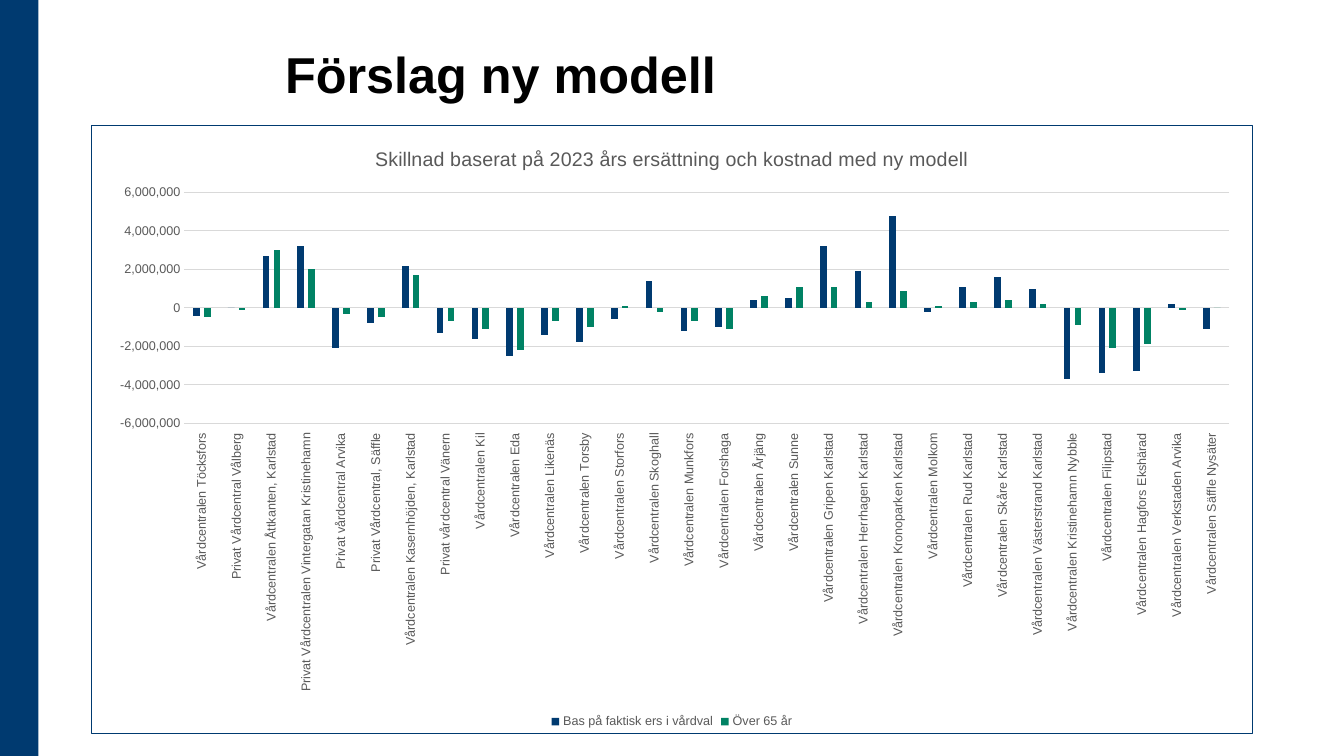
import pptx
import pptx.chart.data
import pptx.dml.color
import pptx.enum.chart
import pptx.enum.shapes
import pptx.enum.text
import pptx.oxml
import pptx.oxml.ns
import pptx.util

Pt = pptx.util.Pt
COLORS = {
    "navy": "003A70",
    "green": "008264",
    "gray": "595959",
    "grid": "D9D9D9",
    "black": "000000",
    "white": "FFFFFF",
}
UNIT = 100_000

# Health centre, difference on current compensation, difference over 65 (in UNIT)
CENTRES = [
    ("Vårdcentralen Töcksfors", -4, -5),
    ("Privat Vårdcentral Vålberg", 0, -1),
    ("Vårdcentralen Åttkanten, Karlstad", 27, 30),
    ("Privat Vårdcentralen Vintergatan Kristinehamn", 32, 20),
    ("Privat vårdcentral Arvika", -21, -3),
    ("Privat Vårdcentral, Säffle", -8, -5),
    ("Vårdcentralen Kasernhöjden, Karlstad", 22, 17),
    ("Privat vårdcentral Vänern", -13, -7),
    ("Vårdcentralen Kil", -16, -11),
    ("Vårdcentralen Eda", -25, -22),
    ("Vårdcentralen Likenäs", -14, -7),
    ("Vårdcentralen Torsby", -18, -10),
    ("Vårdcentralen Storfors", -6, 1),
    ("Vårdcentralen Skoghall", 14, -2),
    ("Vårdcentralen Munkfors", -12, -7),
    ("Vårdcentralen Forshaga", -10, -11),
    ("Vårdcentralen Årjäng", 4, 6),
    ("Vårdcentralen Sunne", 5, 11),
    ("Vårdcentralen Gripen Karlstad", 32, 11),
    ("Vårdcentralen Herrhagen Karlstad", 19, 3),
    ("Vårdcentralen Kronoparken Karlstad", 48, 9),
    ("Vårdcentralen Molkom", -2, 1),
    ("Vårdcentralen Rud Karlstad", 11, 3),
    ("Vårdcentralen Skåre Karlstad", 16, 4),
    ("Vårdcentralen Västerstrand Karlstad", 10, 2),
    ("Vårdcentralen Kristinehamn Nybble", -37, -9),
    ("Vårdcentralen Filipstad", -34, -21),
    ("Vårdcentralen Hagfors Ekshärad", -33, -19),
    ("Vårdcentralen Verkstaden Arvika", 2, -1),
    ("Vårdcentralen Säffle Nysäter", -11, 0),
]
SERIES = [("Bas på faktisk ers i vårdval", "navy"), ("Över 65 år", "green")]


def rgb(color):
    return pptx.dml.color.RGBColor.from_string(COLORS[color])


def style_font(font, size, color="gray", bold=False):
    font.name = "Arial"
    font.size = Pt(size)
    font.bold = bold
    font.color.rgb = rgb(color)


def write_text(frame, text, **style):
    span = frame.paragraphs[0].add_run()
    span.text = text
    style_font(span.font, **style)


def style_line(line, color, width=0.75):
    line.color.rgb = rgb(color)
    line.width = Pt(width)


def frame_chart(chart, fill, border):
    """Fill and outline the whole chart area."""
    area = pptx.oxml.parse_xml(
        f'<c:spPr {pptx.oxml.ns.nsdecls("c", "a")}>'
        f'<a:solidFill><a:srgbClr val="{COLORS[fill]}"/></a:solidFill>'
        f'<a:ln w="{Pt(0.75)}"><a:solidFill><a:srgbClr val="{COLORS[border]}"/>'
        "</a:solidFill></a:ln></c:spPr>"
    )
    chart._chartSpace.find(pptx.oxml.ns.qn("c:chart")).addnext(area)


def place_plot(chart, **fractions):
    """Fix the inner plot area as fractions of the chart."""
    plot_area = chart._chartSpace.chart.plotArea
    for layout in plot_area.findall(pptx.oxml.ns.qn("c:layout")):
        plot_area.remove(layout)
    sizes = "".join(f'<c:{key} val="{value}"/>' for key, value in fractions.items())
    plot_area.insert(0, pptx.oxml.parse_xml(
        f'<c:layout {pptx.oxml.ns.nsdecls("c")}><c:manualLayout>'
        '<c:layoutTarget val="inner"/><c:xMode val="edge"/><c:yMode val="edge"/>'
        f"{sizes}</c:manualLayout></c:layout>"
    ))


class Slide:
    def __init__(self, deck):
        self.page = deck.slides.add_slide(deck.slide_layouts[6])

    def bar(self, left, top, width, height, color):
        box = self.page.shapes.add_shape(
            pptx.enum.shapes.MSO_SHAPE.RECTANGLE, Pt(left), Pt(top), Pt(width), Pt(height))
        box.shadow.inherit = False
        box.fill.solid()
        box.fill.fore_color.rgb = rgb(color)
        box.line.fill.background()

    def text(self, left, top, width, height, text, **style):
        box = self.page.shapes.add_textbox(Pt(left), Pt(top), Pt(width), Pt(height))
        box.text_frame.word_wrap = True
        box.text_frame.vertical_anchor = pptx.enum.text.MSO_ANCHOR.MIDDLE
        write_text(box.text_frame, text, **style)

    def column_chart(self, left, top, width, height, title):
        kinds = pptx.enum.chart
        names, *columns = zip(*CENTRES)
        data = pptx.chart.data.CategoryChartData(number_format="#,##0")
        data.categories = names
        for (name, _), values in zip(SERIES, columns):
            data.add_series(name, [value * UNIT for value in values])
        chart = self.page.shapes.add_chart(
            kinds.XL_CHART_TYPE.COLUMN_CLUSTERED,
            Pt(left), Pt(top), Pt(width), Pt(height), data).chart
        style_font(chart.font, 10, "black")
        frame_chart(chart, "white", "navy")
        place_plot(chart, x=0.08, y=0.11, w=0.9, h=0.38)

        chart.has_title = True
        write_text(chart.chart_title.text_frame, title, size=14)
        chart.chart_title.include_in_layout = False
        chart.has_legend = True
        chart.legend.position = kinds.XL_LEGEND_POSITION.BOTTOM
        chart.legend.include_in_layout = False
        style_font(chart.legend.font, 9)

        plot = chart.plots[0]
        plot.gap_width = 258
        plot.overlap = -62
        plot.vary_by_categories = False
        for series, (_, color) in zip(plot.series, SERIES):
            series.invert_if_negative = False
            series.format.fill.solid()
            series.format.fill.fore_color.rgb = rgb(color)

        for axis in (chart.category_axis, chart.value_axis):
            axis.major_tick_mark = axis.minor_tick_mark = kinds.XL_TICK_MARK.NONE
            style_font(axis.tick_labels.font, 9)
        centres, amounts = chart.category_axis, chart.value_axis
        centres.tick_label_position = kinds.XL_TICK_LABEL_POSITION.LOW
        style_line(centres.format.line, "grid")
        label_body = centres._element.find(".//" + pptx.oxml.ns.qn("a:bodyPr"))
        label_body.set("rot", "-5400000")
        label_body.set("vert", "horz")
        amounts.minimum_scale, amounts.maximum_scale = -60 * UNIT, 60 * UNIT
        amounts.major_unit = 20 * UNIT
        amounts.tick_labels.number_format = "#,##0"
        amounts.tick_labels.number_format_is_linked = False
        amounts.format.line.fill.background()
        style_line(amounts.major_gridlines.format.line, "grid")


def main():
    deck = pptx.Presentation()
    deck.slide_width, deck.slide_height = Pt(960), Pt(540)
    slide = Slide(deck)
    slide.bar(0, 0, 27.5, 540, "navy")
    slide.text(196.5, 0, 566.5, 104.5, "Förslag ny modell", size=36, color="black", bold=True)
    slide.column_chart(65, 89.5, 830, 434.5,
                       "Skillnad baserat på 2023 års ersättning och kostnad med ny modell")
    deck.save("out.pptx")


if __name__ == "__main__":
    main()
